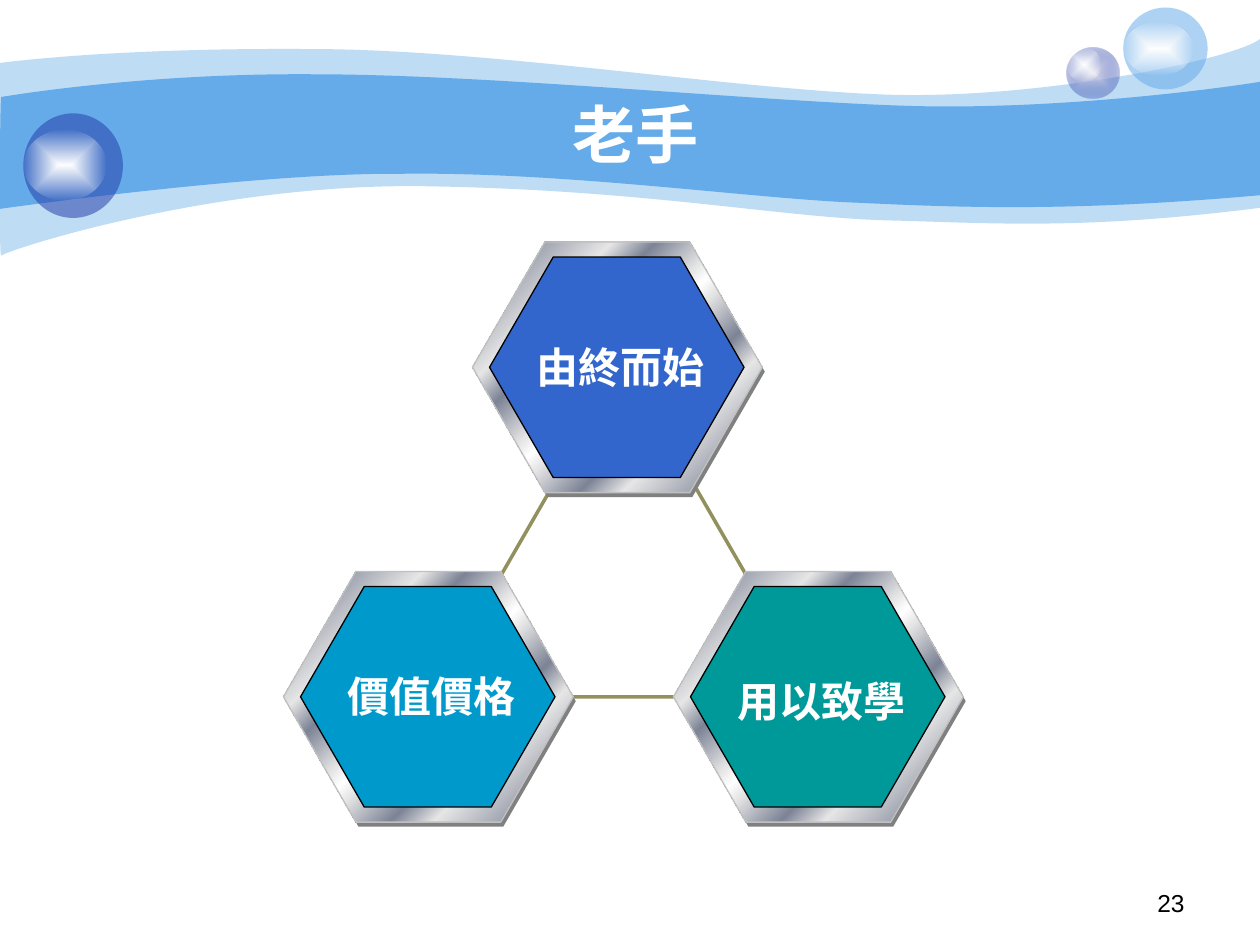
import pptx
import pptx.util
from lxml import etree
from pptx.dml.color import RGBColor
from pptx.enum.shapes import MSO_SHAPE
from pptx.enum.text import MSO_ANCHOR, PP_ALIGN
from pptx.oxml.ns import qn

# Grid of 100 columns by 75 rows
SLIDE_W, SLIDE_H = pptx.util.Inches(10), pptx.util.Inches(7.5)
COL, ROW = SLIDE_W / 100, SLIDE_H / 75

WHITE = RGBColor(0xFF, 0xFF, 0xFF)
BLACK = RGBColor(0, 0, 0)
SKY = RGBColor(0x65, 0xAA, 0xE9)
NAVY = RGBColor(0x23, 0x3D, 0xA9)
PALE = RGBColor(0xE1, 0xE2, 0xED)
OLIVE = RGBColor(0x92, 0x91, 0x5E)
SHADOW = RGBColor(0x80, 0x80, 0x80)
RIM = RGBColor(0xC0, 0xC0, 0xC0)
SILVER = RGBColor(0xE6, 0xE6, 0xE6)
STEEL = RGBColor(0x7D, 0x84, 0x96)
BLUE = RGBColor(0x33, 0x66, 0xCC)
CYAN = RGBColor(0x00, 0x99, 0xCC)
TEAL = RGBColor(0x00, 0x99, 0x99)

CJK, LATIN = "Noto Sans CJK SC", "Arial"

GLOW = [(0, WHITE, 100), (100, WHITE, 0)]
PEARL = [(0, PALE, 100), (100, NAVY, 31)]
METAL = [(0, SILVER, 100), (7, STEEL, 100), (26, SILVER, 100),
         (34, STEEL, 100), (46, SILVER, 100), (50, WHITE, 100),
         (54, SILVER, 100), (66, STEEL, 100), (74, SILVER, 100),
         (93, STEEL, 100), (100, SILVER, 100)]

# Edges of the waves: a start point, then three points for each Bezier segment
OUTER_TOP = [(0, 5), (2.4, 4.7), (10.7, 3.8), (24.7, 3.9),
             (38.6, 3.9), (57.5, 7), (69.9, 7.5),
             (82.2, 8), (98, 4.7), (100, 3.1)]
OUTER_BOTTOM = [(100, 16.5), (85.8, 18.3), (78.7, 17.7), (70.5, 17.5),
                (62.2, 17.3), (51.5, 15.1), (34.3, 14.8),
                (17.2, 14.4), (0.4, 19.9), (0.1, 20.3),
                (-0.1, 20.8), (0, 7.5), (0, 5)]
INNER_TOP = [(0.1, 7.7), (0.2, 7.7), (11, 5.8), (24.8, 5.9),
             (38.6, 5.9), (59.5, 8), (71.8, 8.4),
             (84.1, 8.8), (97.6, 6.9), (100, 6.5)]
INNER_BOTTOM = [(100, 15.5), (85.3, 16.8), (76.5, 16.5), (68.2, 16.1),
                (59.9, 15.8), (44.7, 13.6), (31.7, 13.8),
                (20.3, 13.7), (-0.2, 16.6), (-0.1, 16.6),
                (0, 16.6), (0, 7.7), (0.1, 7.7)]


def box(x, y, w, h):
    return round(x * COL), round(y * ROW), round(w * COL), round(h * ROW)


def set_alpha(s, percent):
    color = s.fill._xPr.find(qn("a:solidFill"))[0]
    etree.SubElement(color, qn("a:alpha"), val=str(percent * 1000))


def set_gradient(s, stops, angle=None):
    """Fill with (position, colour, opacity) stops, radial unless an angle is given."""
    s.fill.background()
    old = s.fill._xPr.find(qn("a:noFill"))
    grad = etree.Element(qn("a:gradFill"), rotWithShape="1")
    gs_list = etree.SubElement(grad, qn("a:gsLst"))
    for position, color, alpha in stops:
        gs = etree.SubElement(gs_list, qn("a:gs"), pos=str(position * 1000))
        rgb = etree.SubElement(gs, qn("a:srgbClr"), val=str(color))
        if alpha < 100:
            etree.SubElement(rgb, qn("a:alpha"), val=str(alpha * 1000))
    if angle is None:
        radial = etree.SubElement(grad, qn("a:path"), {"path": "shape"})
        etree.SubElement(radial, qn("a:fillToRect"),
                         {side: "50000" for side in "ltrb"})
    else:
        etree.SubElement(grad, qn("a:lin"), ang=str(angle * 60000), scaled="1")
    old.getparent().replace(old, grad)


def add_shape(shapes, kind, at, fill=None, line=None, width=0.75):
    s = shapes.add_shape(kind, *box(*at))
    s.shadow.inherit = False
    if fill is None:
        s.fill.background()
    else:
        s.fill.solid()
        s.fill.fore_color.rgb = fill
    if line is None:
        s.line.fill.background()
    else:
        s.line.color.rgb = line
        s.line.width = pptx.util.Pt(width)
    return s


def bend_edge(lines):
    """Merge each three line segments into one Bezier segment."""
    for i in range(0, len(lines), 3):
        curve = etree.Element(qn("a:cubicBezTo"))
        lines[i].addprevious(curve)
        for line in lines[i:i + 3]:
            curve.append(line[0])
            line.getparent().remove(line)


def add_wave(shapes, top, bottom, alpha=100):
    points = [(round(x * COL), round(y * ROW)) for x, y in top + bottom]
    builder = shapes.build_freeform(*points[0])
    builder.add_line_segments(points[1:], close=True)
    s = builder.convert_to_shape()
    lines = list(s._element.iter(qn("a:lnTo")))
    bend_edge(lines[:len(top) - 1])
    bend_edge(lines[len(top):len(points) - 1])
    s.shadow.inherit = False
    s.fill.solid()
    s.fill.fore_color.rgb = SKY
    if alpha < 100:
        set_alpha(s, alpha)
    s.line.fill.background()


def add_bubble(shapes, at, glow_at, color=None):
    """A translucent ball, pearly when it has no colour, with a glow on it."""
    group = shapes.add_group_shape().shapes
    ball = add_shape(group, MSO_SHAPE.OVAL, at, color)
    if color is None:
        set_gradient(ball, PEARL)
    else:
        set_alpha(ball, 53)
    set_gradient(add_shape(group, MSO_SHAPE.OVAL, glow_at), GLOW)


def add_hexagon(shapes, at, fill, line=None):
    s = add_shape(shapes, MSO_SHAPE.HEXAGON, at, fill, line)
    s.adjustments[0] = 0.289
    s.adjustments[1] = 1.1547
    return s


def add_tile(shapes, x, y, color):
    """A coloured hexagon in a metal frame with a hard shadow."""
    group = shapes.add_group_shape().shapes
    add_hexagon(group, (x + 0.2, y + 0.35, 23, 19.9), SHADOW)
    set_gradient(add_hexagon(group, (x, y, 23, 19.9), None, RIM), METAL, 45)
    add_hexagon(group, (x + 1.35, y + 1.2, 20.2, 17.5), color, BLACK)


def add_text(shapes, at, text, size, font=CJK, color=WHITE, bold=True,
             align=PP_ALIGN.CENTER, anchor=MSO_ANCHOR.TOP, wrap=True):
    tf = shapes.add_textbox(*box(*at)).text_frame
    tf.word_wrap = wrap
    tf.vertical_anchor = anchor
    p = tf.paragraphs[0]
    p.text = text
    p.alignment = align
    r = p.runs[0]
    r.font.name = font
    r.font.size = pptx.util.Pt(size)
    r.font.bold = bold
    r.font.color.rgb = color
    etree.SubElement(r.font._element, qn("a:ea"), typeface=font)


def main():
    prs = pptx.Presentation()
    prs.slide_width, prs.slide_height = SLIDE_W, SLIDE_H
    shapes = prs.slides.add_slide(prs.slide_layouts[6]).shapes

    add_wave(shapes, OUTER_TOP, OUTER_BOTTOM, alpha=41)
    add_wave(shapes, INNER_TOP, INNER_BOTTOM)
    add_bubble(shapes, (84.65, 3.8, 4.2, 4), (84.65, 3.8, 2.8, 2.7))
    add_bubble(shapes, (89.15, 0.6, 6.7, 6.5), (89.15, 1.7, 5.6, 4.3), SKY)
    add_bubble(shapes, (1.85, 9, 7.9, 8.3), (1.85, 10.3, 6.6, 5.6), NAVY)

    add_text(shapes, (10, 7.5, 80.8, 6.2), "老手", 36, anchor=MSO_ANCHOR.MIDDLE)
    add_text(shapes, (71.7, 70, 23.3, 3.5), "23", 14, LATIN, BLACK,
             bold=False, align=PP_ALIGN.RIGHT)

    add_shape(shapes, MSO_SHAPE.ISOSCELES_TRIANGLE, (34.2, 28.8, 30.6, 26.5),
              line=OLIVE, width=2)
    tiles = [("由終而始", 37.5, 19.2, BLUE, 7.45),
             ("價值價格", 22.5, 45.35, CYAN, 7.4),
             ("用以致學", 53.45, 45.35, TEAL, 7.75)]
    for text, x, y, color, _ in tiles:
        add_tile(shapes, x, y, color)
    for text, x, y, _, label_drop in tiles:
        add_text(shapes, (x + 4, y + label_drop, 15.5, 5), text, 24, wrap=False)

    prs.save("out.pptx")


if __name__ == "__main__":
    main()
